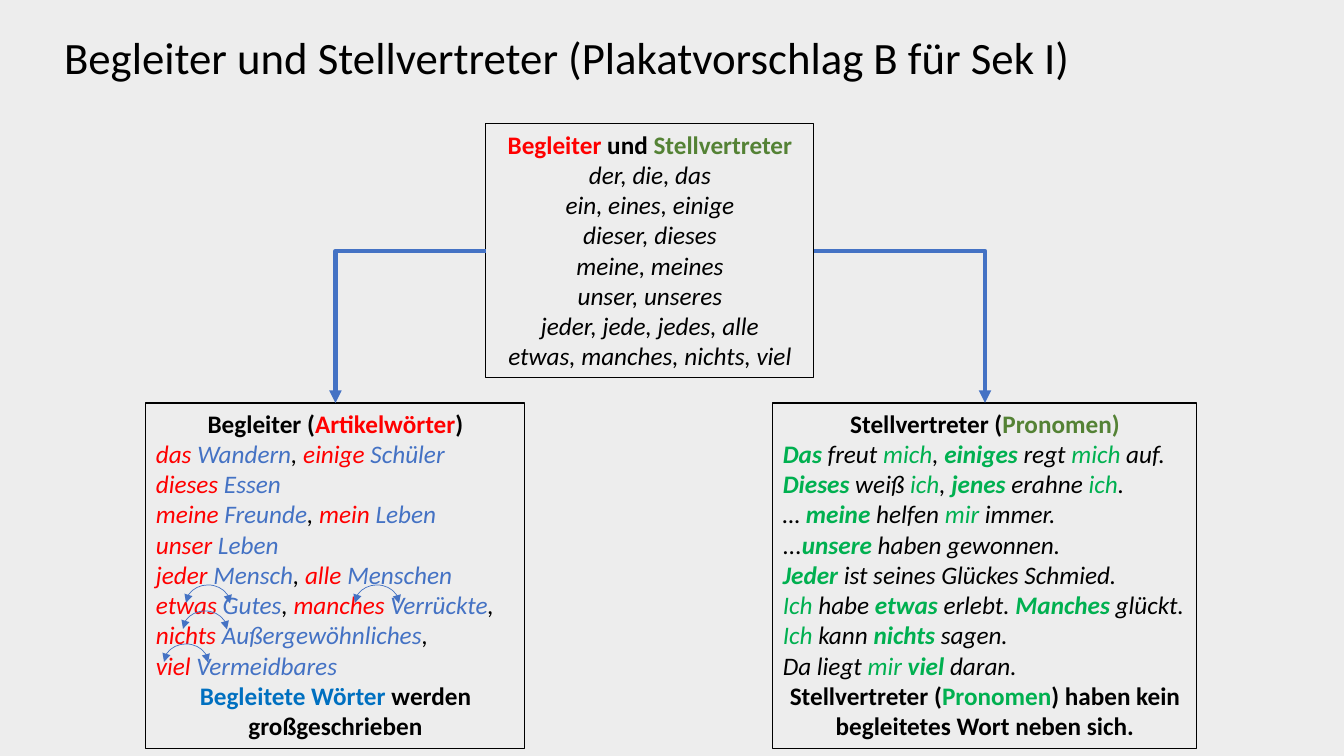
import pptx
import pptx.util
import pptx.dml.color
import pptx.enum.dml
import pptx.enum.shapes
import pptx.enum.text
import pptx.oxml
import pptx.oxml.ns

RGBColor = pptx.dml.color.RGBColor
BACKGROUND = RGBColor(0xED, 0xED, 0xED)
BLACK = RGBColor(0x00, 0x00, 0x00)
RED = RGBColor(0xFF, 0x00, 0x00)
BLUE = RGBColor(0x44, 0x72, 0xC4)
BRIGHT_BLUE = RGBColor(0x00, 0x70, 0xC0)
GREEN = RGBColor(0x00, 0xB0, 0x50)
DARK_GREEN = RGBColor(0x54, 0x82, 0x35)
FONT = "Calibri"

# Run styles: colour, bold, italic
HEAD = (BLACK, True, False)
HEAD_RED = (RED, True, False)
HEAD_BLUE = (BRIGHT_BLUE, True, False)
HEAD_GREEN = (GREEN, True, False)
HEAD_DARK_GREEN = (DARK_GREEN, True, False)
PLAIN = (BLACK, False, True)
ARTICLE = (RED, False, True)
NOUN = (BLUE, False, True)
PRONOUN = (GREEN, False, True)
STRONG = (GREEN, True, True)
BREAK = ("\n", PLAIN)
COMMA = (", ", PLAIN)

CENTER = pptx.enum.text.PP_ALIGN.CENTER
LEFT = pptx.enum.text.PP_ALIGN.LEFT

TITLE = "Begleiter und Stellvertreter (Plakatvorschlag B für Sek I)"
WORD_LISTS = [
    "der, die, das", "ein, eines, einige", "dieser, dieses", "meine, meines",
    "unser, unseres", "jeder, jede, jedes, alle", "etwas, manches, nichts, viel",
]
OVERVIEW = [
    (CENTER, [("Begleiter", HEAD_RED), (" und ", HEAD), ("Stellvertreter", HEAD_DARK_GREEN)]),
] + [(CENTER, [(words, PLAIN)]) for words in WORD_LISTS]

COMPANIONS = [
    (CENTER, [("Begleiter (", HEAD), ("Artikelwörter", HEAD_RED), (")", HEAD)]),
    (LEFT, [("das ", ARTICLE), ("Wandern", NOUN), COMMA, ("einige ", ARTICLE), ("Schüler", NOUN)]),
    (LEFT, [("dieses ", ARTICLE), ("Essen", NOUN)]),
    (LEFT, [("meine ", ARTICLE), ("Freunde", NOUN), COMMA, ("mein ", ARTICLE), ("Leben", NOUN)]),
    (LEFT, [("unser ", ARTICLE), ("Leben", NOUN)]),
    (LEFT, [("jeder ", ARTICLE), ("Mensch", NOUN), COMMA, ("alle ", ARTICLE), ("Menschen", NOUN)]),
    (LEFT, [("etwas ", ARTICLE), ("Gutes", NOUN), COMMA, ("manches ", ARTICLE),
            ("Verrückte", NOUN), COMMA, ("nichts ", ARTICLE), ("Außergewöhnliches", NOUN),
            COMMA, BREAK, ("viel ", ARTICLE), ("Vermeidbares", NOUN)]),
    (CENTER, [("Begleitete Wörter ", HEAD_BLUE), ("werden großgeschrieben", HEAD)]),
]
SUBSTITUTES = [
    (CENTER, [("Stellvertreter (", HEAD), ("Pronomen)", HEAD_DARK_GREEN)]),
    (LEFT, [("Das", STRONG), (" freut ", PLAIN), ("mich", PRONOUN), COMMA,
            ("einiges", STRONG), (" regt ", PLAIN), ("mich", PRONOUN), (" auf.", PLAIN)]),
    (LEFT, [("Dieses", STRONG), (" weiß ", PLAIN), ("ich", PRONOUN), COMMA,
            ("jenes", STRONG), (" erahne ", PLAIN), ("ich", PRONOUN), (".", PLAIN)]),
    (LEFT, [("… ", PLAIN), ("meine", STRONG), (" helfen ", PLAIN), ("mir", PRONOUN),
            (" immer.", PLAIN)]),
    (LEFT, [("...", PLAIN), ("unsere", STRONG), (" haben gewonnen.", PLAIN)]),
    (LEFT, [("Jeder", STRONG), (" ist seines Glückes Schmied.", PLAIN)]),
    (LEFT, [("Ich", PRONOUN), (" habe ", PLAIN), ("etwas", STRONG), (" erlebt. ", PLAIN),
            ("Manches", STRONG), (" glückt.", PLAIN), BREAK, ("Ich", PRONOUN),
            (" kann ", PLAIN), ("nichts", STRONG), (" sagen.", PLAIN)]),
    (LEFT, [("Da liegt ", PLAIN), ("mir ", PRONOUN), ("viel", STRONG), (" daran.", PLAIN)]),
    (CENTER, [("Stellvertreter (", HEAD), ("Pronomen", HEAD_GREEN),
              (") haben kein begleitetes Wort neben sich.", HEAD)]),
]

# Lengths in px: left, top, width, height
SLIDE_SIZE = (1344, 756)
TITLE_AREA = (54, 28, 1190, 64)
OVERVIEW_AREA = (486, 124, 328, 254)
COMPANIONS_AREA = (146, 403, 379, 346)
SUBSTITUTES_AREA = (773, 403, 424, 346)
ARC_CORNERS = [(186, 585), (355, 585), (183, 611), (164, 644)]
ARC_SIZE = (44, 37)
ARC_ANGLES = (108.89, 0)  # unit: 100000 / 60000 degrees
TOP_SITE, LEFT_SITE, RIGHT_SITE = 0, 1, 3


def emu(lengths):
    return [round(px * 914400 / 100.8) for px in lengths]


def style_line(line, color, points, ends=()):
    """Set colour and width, and put triangles at the given ends (headEnd, tailEnd)."""
    line.color.rgb = color
    line.width = pptx.util.Pt(points)
    ln = line._get_or_add_ln()
    for end in ends:
        arrow = pptx.oxml.parse_xml(f'<a:{end} {pptx.oxml.ns.nsdecls("a")} type="triangle"/>')
        ln.append(arrow)


def add_box(slide, area, paragraphs):
    box = slide.shapes.add_textbox(*emu(area))
    style_line(box.line, BLACK, 0.75)
    frame = box.text_frame
    frame.word_wrap = True
    frame.auto_size = pptx.enum.text.MSO_AUTO_SIZE.SHAPE_TO_FIT_TEXT
    for number, (alignment, pieces) in enumerate(paragraphs):
        paragraph = frame.add_paragraph() if number else frame.paragraphs[0]
        paragraph.alignment = alignment
        for piece in pieces:
            if piece == BREAK:
                paragraph.add_line_break()
                continue
            text, (color, bold, italic) = piece
            run = paragraph.add_run()
            run.text = text
            run.font.name = FONT
            run.font.size = pptx.util.Pt(18)
            run.font.bold = bold
            run.font.italic = italic
            run.font.color.rgb = color
    return box


def add_bent_arrow(slide, source, source_site, target):
    """Leave the source sideways and enter the target from above, with one corner."""
    arrow = slide.shapes.add_connector(pptx.enum.shapes.MSO_CONNECTOR.ELBOW, 0, 0, 0, 0)
    arrow.begin_connect(source, source_site)
    arrow.end_connect(target, TOP_SITE)
    properties = arrow._element.spPr
    properties.find(pptx.oxml.ns.qn("a:prstGeom")).set("prst", "bentConnector2")
    style_line(arrow.line, BLUE, 3, ["tailEnd"])
    properties.append(pptx.oxml.parse_xml(f'<a:effectLst {pptx.oxml.ns.nsdecls("a")}/>'))


def add_arc(slide, corner):
    arc = slide.shapes.add_shape(pptx.enum.shapes.MSO_SHAPE.ARC, *emu(corner + ARC_SIZE))
    arc.adjustments[0], arc.adjustments[1] = ARC_ANGLES
    arc.shadow.inherit = False
    arc.fill.background()
    style_line(arc.line, BLUE, 0.5, ["headEnd", "tailEnd"])


def add_title(slide):
    title = slide.shapes.title
    title.left, title.top, title.width, title.height = emu(TITLE_AREA)
    title.text_frame.text = TITLE
    title.text_frame.vertical_anchor = pptx.enum.text.MSO_ANCHOR.MIDDLE
    paragraph = title.text_frame.paragraphs[0]
    paragraph.alignment = LEFT
    paragraph.line_spacing = 0.9
    font = paragraph.runs[0].font
    font.name = FONT
    font.size = pptx.util.Pt(32)
    font.color.rgb = BLACK


def main():
    deck = pptx.Presentation()
    deck.slide_width, deck.slide_height = emu(SLIDE_SIZE)
    slide = deck.slides.add_slide(deck.slide_layouts.get_by_name("Title Only"))
    slide.background.fill.solid()
    slide.background.fill.fore_color.rgb = BACKGROUND
    add_title(slide)
    overview = add_box(slide, OVERVIEW_AREA, OVERVIEW)
    companions = add_box(slide, COMPANIONS_AREA, COMPANIONS)
    substitutes = add_box(slide, SUBSTITUTES_AREA, SUBSTITUTES)
    for corner in ARC_CORNERS:
        add_arc(slide, corner)
    add_bent_arrow(slide, overview, LEFT_SITE, companions)
    add_bent_arrow(slide, overview, RIGHT_SITE, substitutes)
    deck.save("out.pptx")


if __name__ == "__main__":
    main()
